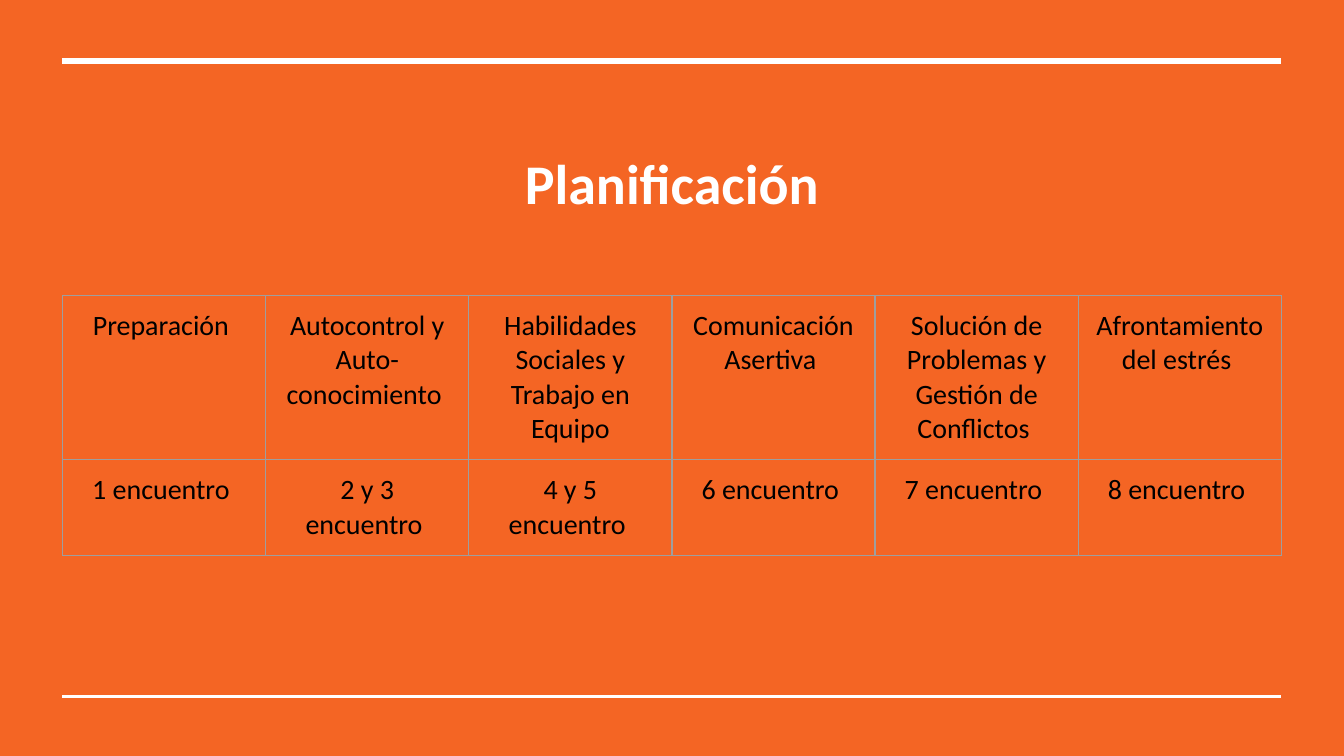
from pptx import Presentation
from pptx.dml.color import RGBColor
from pptx.enum.shapes import MSO_CONNECTOR
from pptx.enum.text import MSO_ANCHOR, MSO_AUTO_SIZE, PP_ALIGN
from pptx.oxml.ns import qn
from pptx.util import Pt
from lxml.etree import SubElement

# Content: trailing spaces belong to the cell wording
TITLE = "Planificación"
PLAN = [
    ("Preparación ", "1 encuentro "),
    ("Autocontrol y Auto- conocimiento ", "2 y 3 encuentro "),
    ("Habilidades Sociales y Trabajo en Equipo", "4 y 5 encuentro "),
    ("Comunicación Asertiva ", "6 encuentro "),
    ("Solución de Problemas y Gestión de Conflictos ", "7 encuentro "),
    ("Afrontamiento del estrés ", "8 encuentro "),
]

THEME = {
    "font": "Calibri", "title_size": 30, "cell_size": 15,
    "background": "F46524", "light": "FFFFFF", "dark": "000000",
    "border": "9E9E9E", "border_width": 0.75,
}

# Layout in points
SLIDE_W, SLIDE_H = 720, 405
MARGIN, INSET = 33.5, 7.2
WIDTH = SLIDE_W - 2 * MARGIN
TITLE_TOP, TABLE_TOP = 36.8, 158.3
ROW_HEIGHTS = [88, 51.4]
RULES = [(32.6, 3), (373.2, 1.5)]  # y, line width


def rgb(name):
    return RGBColor.from_string(THEME[name])


def add_text(tf, text, size, color, bold=False):
    p = tf.paragraphs[0]
    p.alignment = PP_ALIGN.CENTER
    r = p.add_run()
    r.text = text
    r.font.name = THEME["font"]
    r.font.size = Pt(THEME[size])
    r.font.color.rgb = rgb(color)
    r.font.bold = bold


def set_margins(box):
    box.margin_left = box.margin_right = Pt(INSET)
    box.margin_top = box.margin_bottom = Pt(INSET)


def add_borders(cell):
    tc_pr = cell._tc.get_or_add_tcPr()
    for i, tag in enumerate(("a:lnL", "a:lnR", "a:lnT", "a:lnB")):
        ln = tc_pr.makeelement(qn(tag), {"w": str(Pt(THEME["border_width"]))})
        fill = SubElement(ln, qn("a:solidFill"))
        SubElement(fill, qn("a:srgbClr"), val=THEME["border"])
        tc_pr.insert(i, ln)


prs = Presentation()
prs.slide_width, prs.slide_height = Pt(SLIDE_W), Pt(SLIDE_H)
s = prs.slides.add_slide(prs.slide_layouts[5])
s.background.fill.solid()
s.background.fill.fore_color.rgb = rgb("background")

# Top and bottom rules
for y, weight in RULES:
    rule = s.shapes.add_connector(
        MSO_CONNECTOR.STRAIGHT, Pt(MARGIN), Pt(y), Pt(MARGIN + WIDTH), Pt(y))
    rule.line.color.rgb = rgb("light")
    rule.line.width = Pt(weight)
    SubElement(rule._element.spPr, qn("a:effectLst"))

# Title
title = s.shapes.title
title.left, title.top = Pt(MARGIN), Pt(TITLE_TOP)
title.width, title.height = Pt(WIDTH), Pt(TABLE_TOP - TITLE_TOP)
tf = title.text_frame
tf.word_wrap = True
tf.auto_size = MSO_AUTO_SIZE.NONE
tf.vertical_anchor = MSO_ANCHOR.MIDDLE
set_margins(tf)
add_text(tf, TITLE, "title_size", "light", bold=True)

# Plan table: one column per topic, sessions below
table = s.shapes.add_table(
    len(ROW_HEIGHTS), len(PLAN), Pt(MARGIN), Pt(TABLE_TOP),
    Pt(WIDTH), Pt(sum(ROW_HEIGHTS))).table
table.first_row = table.horz_banding = False
for row, height in zip(table.rows, ROW_HEIGHTS):
    row.height = Pt(height)
for c, entries in enumerate(PLAN):
    table.columns[c].width = Pt(WIDTH / len(PLAN))
    for r, text in enumerate(entries):
        cell = table.cell(r, c)
        cell.fill.background()
        set_margins(cell)
        add_borders(cell)
        add_text(cell.text_frame, text, "cell_size", "dark")

prs.save("out.pptx")
